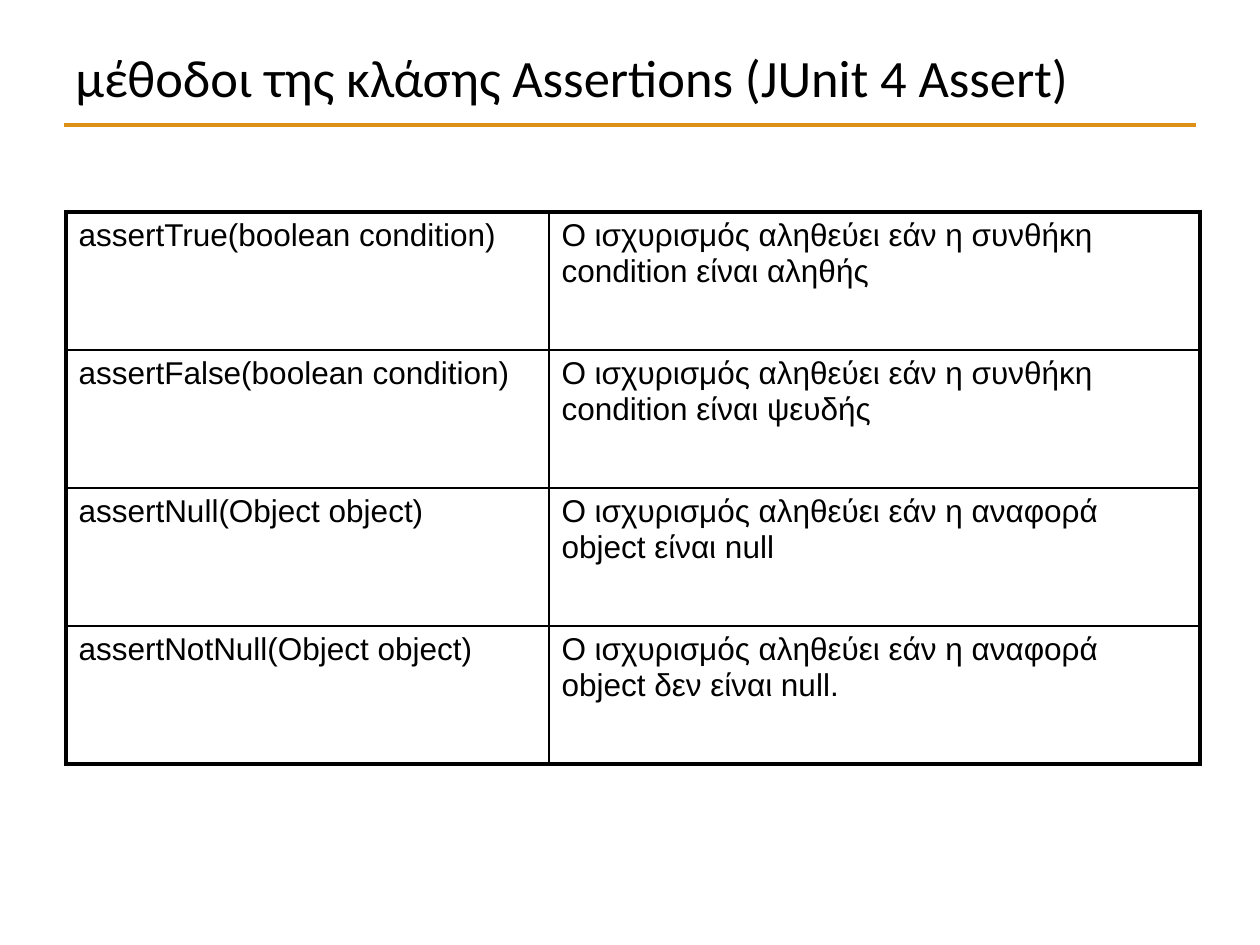
"""Builds a slide with a table of JUnit assertion methods."""
from lxml import etree
from pptx import Presentation
from pptx.dml.color import RGBColor
from pptx.enum.shapes import MSO_CONNECTOR
from pptx.enum.text import MSO_ANCHOR
from pptx.oxml.ns import qn
from pptx.util import Emu, Pt

STRAIGHT = MSO_CONNECTOR.STRAIGHT
MIDDLE = MSO_ANCHOR.MIDDLE
COLORS = {"ink": "000000", "accent": "DC9016"}
CLAIM = "Ο ισχυρισμός αληθεύει εάν η "
ROWS = [
    ("assertTrue(boolean condition)", CLAIM + "συνθήκη condition είναι αληθής"),
    ("assertFalse(boolean condition)", CLAIM + "συνθήκη condition είναι ψευδής"),
    ("assertNull(Object object)", CLAIM + "αναφορά object είναι null"),
    ("assertNotNull(Object object)", CLAIM + "αναφορά object δεν είναι null."),
]


def px(n):
    return Emu(round(n * 914400 / 126))


class Deck:
    def __init__(self):
        self.prs = Presentation()
        self.prs.slide_width, self.prs.slide_height = px(1260), px(945)
        self.s = self.prs.slides.add_slide(self.prs.slide_layouts[6])

    def run(self, p, text, size, font):
        r = p.add_run()
        r.text = text
        r.font.size, r.font.name = Pt(size), font
        r.font.color.rgb = RGBColor.from_string(COLORS["ink"])

    def line(self, x1, y1, x2, y2, color, width):
        c = self.s.shapes.add_connector(STRAIGHT, px(x1), px(y1), px(x2), px(y2))
        c.line.color.rgb = RGBColor.from_string(COLORS[color])
        c.line.width = Pt(width)
        etree.SubElement(c._element.spPr, qn("a:effectLst"))

    def text(self, x, y, w, h, text, size, font):
        tf = self.s.shapes.add_textbox(px(x), px(y), px(w), px(h)).text_frame
        tf.word_wrap, tf.vertical_anchor = True, MIDDLE
        self.run(tf.paragraphs[0], text, size, font)

    def border(self, cell, side, width):
        ln = etree.SubElement(cell._tc.get_or_add_tcPr(), qn("a:" + side), w=str(Pt(width)))
        fill = etree.SubElement(ln, qn("a:solidFill"))
        etree.SubElement(fill, qn("a:srgbClr"), val=COLORS["ink"])

    def table(self, x, y, widths, row_h, rows, size, font, outer, inner):
        n, m = len(rows), len(widths)
        frame = self.s.shapes.add_table(n, m, px(x), px(y), px(sum(widths)), px(row_h * n))
        tbl = frame.table
        tbl.first_row = tbl.horz_banding = False
        for col, w in zip(tbl.columns, widths):
            col.width = px(w)
        for i, row in enumerate(rows):
            tbl.rows[i].height = px(row_h)
            for j, text in enumerate(row):
                cell = tbl.cell(i, j)
                self.run(cell.text_frame.paragraphs[0], text, size, font)
                edges = {"lnL": j == 0, "lnR": j == m - 1, "lnT": i == 0, "lnB": i == n - 1}
                for side, on_edge in edges.items():
                    self.border(cell, side, outer if on_edge else inner)
                cell.fill.background()


def main():
    d = Deck()
    d.line(64, 125, 1196, 125, "accent", 2.5)
    d.text(63, 38, 1134, 77, "μέθοδοι της κλάσης Assertions (JUnit 4 Assert)", 30, "Calibri")
    d.table(66, 212, [483, 651], 138, ROWS, 18, "Arial", 2.25, 1)
    d.prs.save("out.pptx")


if __name__ == "__main__":
    main()
